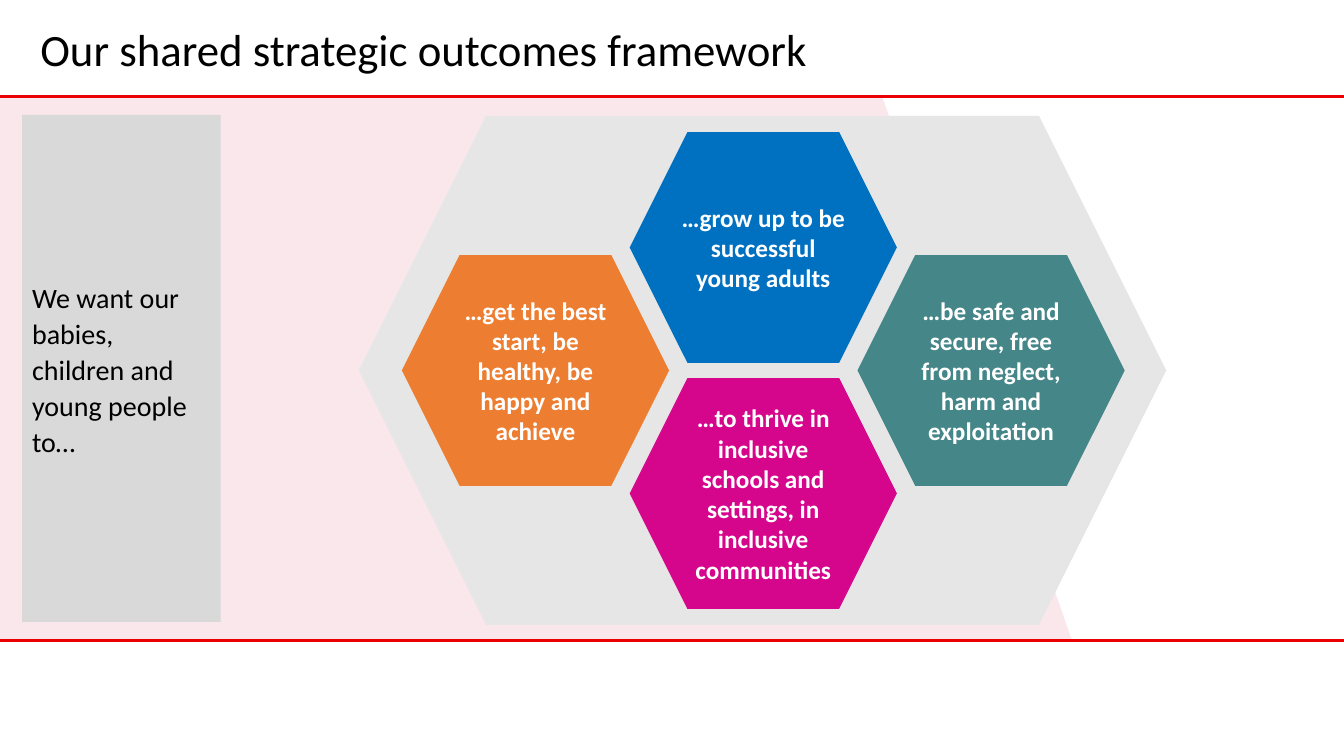
from lxml.etree import SubElement
from pptx import Presentation
from pptx.dml.color import RGBColor
from pptx.enum.shapes import MSO_CONNECTOR, MSO_SHAPE
from pptx.enum.text import MSO_ANCHOR as Anchor, MSO_AUTO_SIZE as AutoSize, PP_ALIGN as Align
from pptx.oxml.ns import qn
from pptx.util import Inches, Pt

COLORS = {
    "text": "000000", "white": "FFFFFF", "rule": "EA0000", "band": "FAE7EC",
    "panel": "D9D9D9", "frame": "E6E6E6", "orange": "ED7D31",
    "teal": "458688", "magenta": "D6068C", "blue": "0070C0",
}


def write_text(text_frame, text, size, color="text", bold=False, align=Align.LEFT,
               anchor=Anchor.MIDDLE, spacing=1.0):
    text_frame.word_wrap = True
    text_frame.auto_size = AutoSize.NONE
    text_frame.vertical_anchor = anchor
    text_frame.text = text
    paragraph = text_frame.paragraphs[0]
    paragraph.alignment = align
    paragraph.line_spacing = spacing
    font = paragraph.runs[0].font
    font.name, font.size, font.bold = "Calibri", Pt(size), bold
    font.color.rgb = RGBColor.from_string(COLORS[color])


class FrameworkSlide:
    """Places elements on a grid of 100 columns by 100 rows."""

    def __init__(self, presentation):
        self.column = presentation.slide_width / 100
        self.row = presentation.slide_height / 100
        self.slide = presentation.slides.add_slide(presentation.slide_layouts[5])
        self.shapes = self.slide.shapes

    def box(self, left, top, width, height):
        return (round(left * self.column), round(top * self.row),
                round(width * self.column), round(height * self.row))

    def title(self, text, *place):
        title = self.shapes.title
        title.left, title.top, title.width, title.height = self.box(*place)
        write_text(title.text_frame, text, 32, anchor=Anchor.BOTTOM, spacing=0.9)

    def shape(self, kind, fill, *place, parent=None):
        shapes = parent.shapes if parent else self.shapes
        shape = shapes.add_shape(kind, *self.box(*place))
        shape.shadow.inherit = False
        shape.fill.solid()
        shape.fill.fore_color.rgb = RGBColor.from_string(COLORS[fill])
        shape.line.fill.background()
        return shape

    def rule(self, row):
        left, top, width, _ = self.box(0, row, 100, 0)
        line = self.shapes.add_connector(MSO_CONNECTOR.STRAIGHT, left, top, left + width, top)
        line.line.color.rgb = RGBColor.from_string(COLORS["rule"])
        line.line.width = Pt(2.25)
        SubElement(line.element.spPr, qn("a:effectLst"))


def main():
    presentation = Presentation()
    presentation.slide_width, presentation.slide_height = Inches(13.33), Inches(7.5)
    page = FrameworkSlide(presentation)

    # Pink band with a slanted right end
    band_top, band_height = 12.8, 71.73
    slant = page.shape(MSO_SHAPE.PARALLELOGRAM, "band", 20.48, band_top, 59.25, band_height)
    slant.adjustments[0] = 0.349
    slant.element.spPr.xfrm.set("flipH", "1")
    page.shape(MSO_SHAPE.RECTANGLE, "band", 0, band_top, 40.28, band_height)

    # Title and rules
    page.title("Our shared strategic outcomes framework", 2.25, 2.67, 95.7, 8.13)
    for row in (band_top, 84.67):
        page.rule(row)

    # Outcome hexagons: (horizontal step, vertical step, fill, text)
    outcomes = [
        (0, 1, "orange", "…get the best start, be healthy, be happy and achieve"),
        (2, 1, "teal", "…be safe and secure, free from neglect, harm and exploitation"),
        (1, 2, "magenta", "…to thrive in inclusive schools and settings, in inclusive communities"),
        (1, 0, "blue", "…grow up to be successful young adults"),
    ]
    group = page.shapes.add_group_shape()
    page.shape(MSO_SHAPE.HEXAGON, "frame", 26.7, 15.33, 60.08, 67.33, parent=group)
    for across, down, fill, text in outcomes:
        hexagon = page.shape(MSO_SHAPE.HEXAGON, fill, 29.9 + 16.95 * across,
                             17.47 + 16.27 * down, 19.88, 30.53, parent=group)
        write_text(hexagon.text_frame, text, 18, color="white", bold=True, align=Align.CENTER)

    # Side panel
    panel = page.shape(MSO_SHAPE.RECTANGLE, "panel", 1.65, 15.2, 14.78, 67.07)
    write_text(panel.text_frame, "We want our babies, children and young people to…", 20,
               spacing=1.07)

    presentation.save("out.pptx")


if __name__ == "__main__":
    main()
